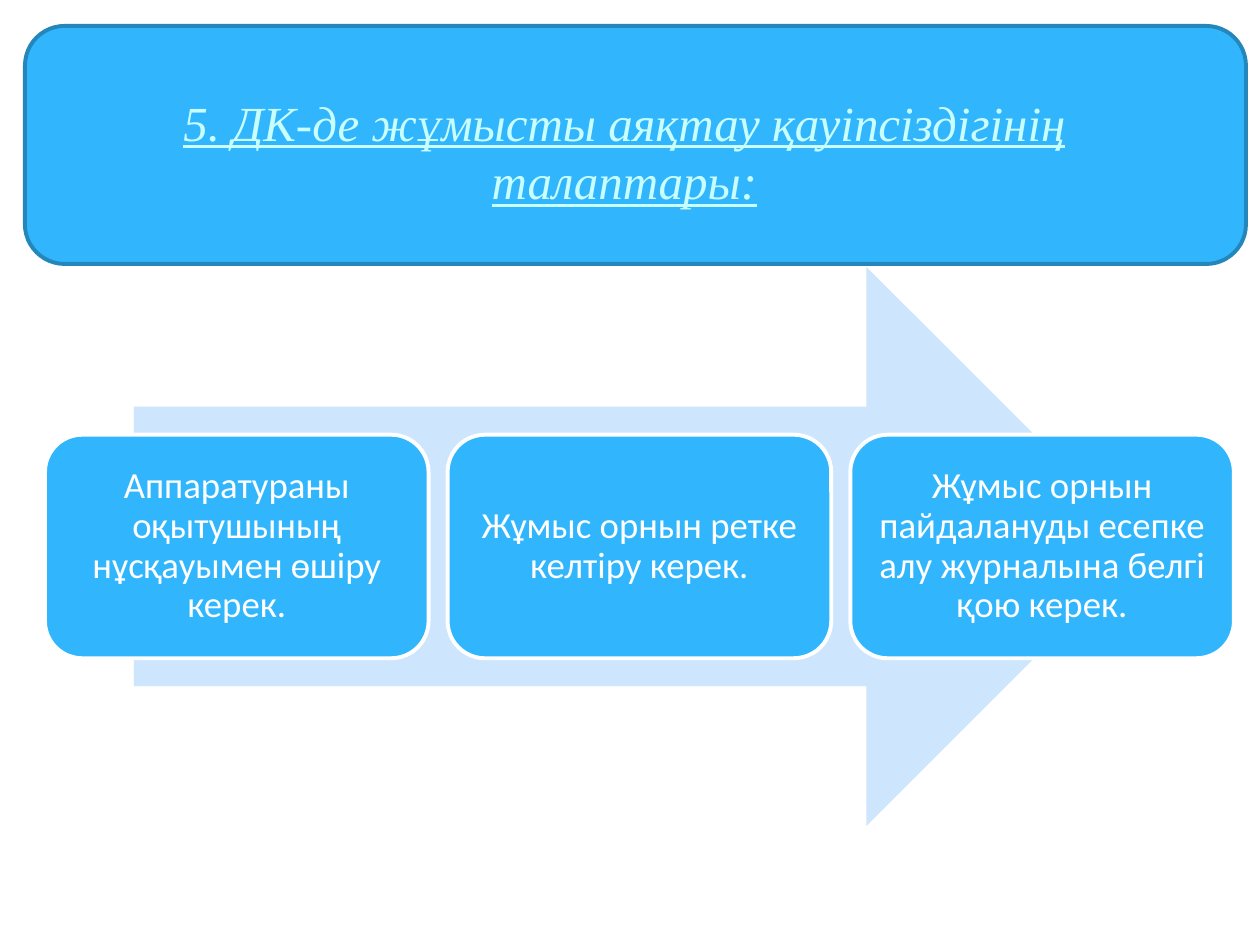
import pptx
import pptx.dml.color
import pptx.enum.shapes
import pptx.enum.text
import pptx.util

SCALE = 914400 / 126
SHAPES = pptx.enum.shapes.MSO_SHAPE
ANCHOR = pptx.enum.text.MSO_ANCHOR
BLUE, WHITE = "31B6FD", "FFFFFF"
STEPS = [
    "Аппаратураны оқытушының нұсқауымен өшіру керек.",
    "Жұмыс орнын ретке келтіру керек.",
    "Жұмыс орнын пайдалануды есепке алу журналына белгі қою керек.",
]


def px(length):
    """Turn a length in px into EMU."""
    return pptx.util.Emu(round(length * SCALE))


def paint(colour_format, colour):
    """Set a solid colour from a hex string."""
    colour_format.rgb = pptx.dml.color.RGBColor.from_string(colour)


def add_block(page, kind, box, fill, line=None):
    """Add a filled preset shape with an optional outline."""
    block = page.shapes.add_shape(kind, *map(px, box))
    block.shadow.inherit = False
    block.fill.solid()
    paint(block.fill.fore_color, fill)
    if line:
        paint(block.line.color, line)
        block.line.width = pptx.util.Pt(2.25)
    else:
        block.line.fill.background()
    return block


def write(shape, text, font, size, colour, anchor, margins):
    """Write one centred paragraph and return it."""
    frame = shape.text_frame
    frame.text = text
    frame.word_wrap = True
    frame.auto_size = pptx.enum.text.MSO_AUTO_SIZE.NONE
    frame.vertical_anchor = anchor
    frame.margin_left = frame.margin_right = px(margins[0])
    frame.margin_top = frame.margin_bottom = px(margins[1])
    para = frame.paragraphs[0]
    para.alignment = pptx.enum.text.PP_ALIGN.CENTER
    span = para.runs[0]
    span.font.name = font
    span.font.size = pptx.util.Pt(size)
    paint(span.font.color, colour)
    return para


def build_header(page, box):
    """Place the title on a rounded panel."""
    left, top, width, height = box
    panel = add_block(page, SHAPES.ROUNDED_RECTANGLE, box, BLUE, "2487BB")
    title = page.shapes.title
    title.element.addprevious(panel.element)
    title.left, title.top = px(left + 59), px(top + 60)
    title.width, title.height = px(width - 140), px(height - 107)
    para = write(title, "5. ДК-де жұмысты аяқтау қауіпсіздігінің талаптары:",
                 "Times New Roman", 28, "C8FEFD", ANCHOR.TOP, (13, 6))
    para.runs[0].font.italic = True
    para.runs[0].font.underline = True


def build_process(page, box, gap=19):
    """Place equal step cards in a row over a wide arrow."""
    left, top, width, height = box
    add_block(page, SHAPES.RIGHT_ARROW, (left + 89, top, 1012, height), "CEE5FE")
    card_width = (width - gap * (len(STEPS) - 1)) / len(STEPS)
    card_height = height * 0.4
    for index, text in enumerate(STEPS):
        card_box = (left + index * (card_width + gap),
                    top + (height - card_height) / 2, card_width, card_height)
        card = add_block(page, SHAPES.ROUNDED_RECTANGLE, card_box, BLUE, WHITE)
        para = write(card, text, "Calibri", 21, WHITE, ANCHOR.MIDDLE, (11, 11))
        para.line_spacing = 0.9


def main():
    """Build the slide and save the deck."""
    deck = pptx.Presentation()
    deck.slide_width, deck.slide_height = px(1260), px(945)
    page = deck.slides.add_slide(deck.slide_layouts[5])
    build_header(page, (25, 26, 1221, 238))
    build_process(page, (45, 267, 1189, 559))
    deck.save("out.pptx")


if __name__ == "__main__":
    main()
